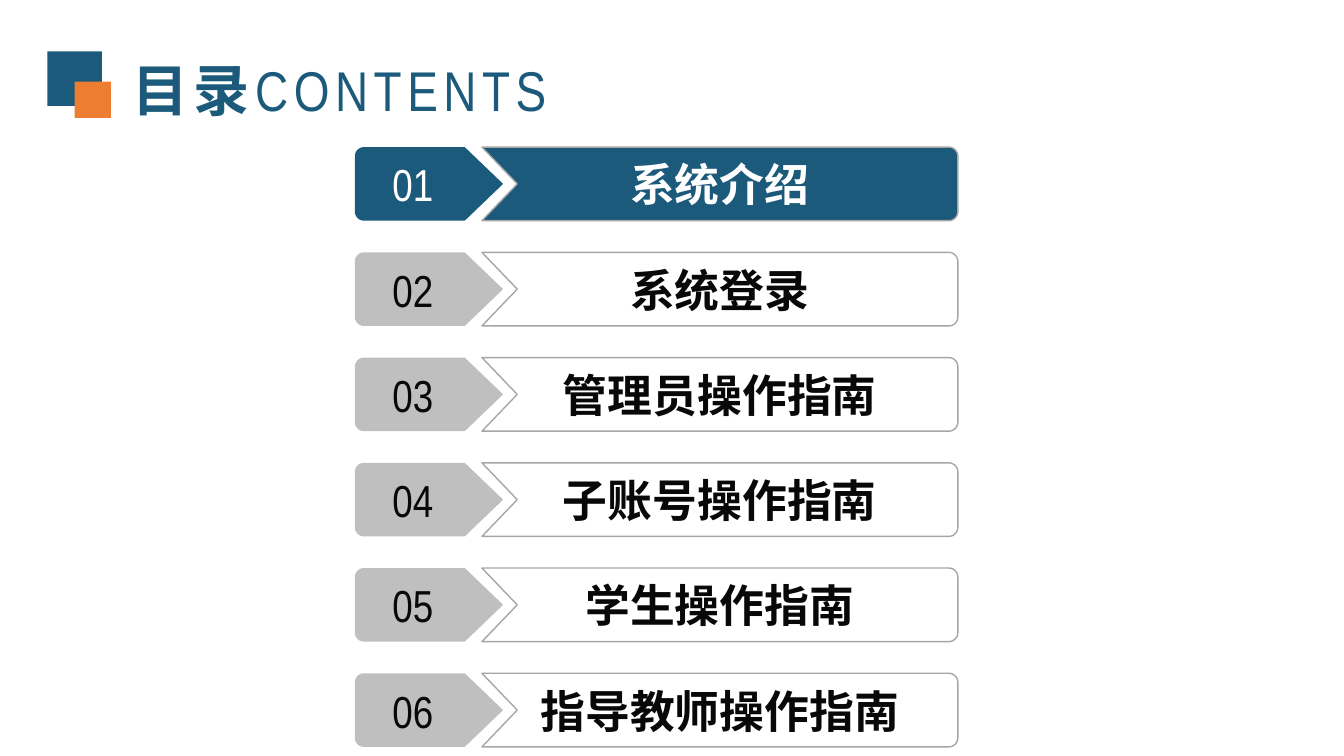
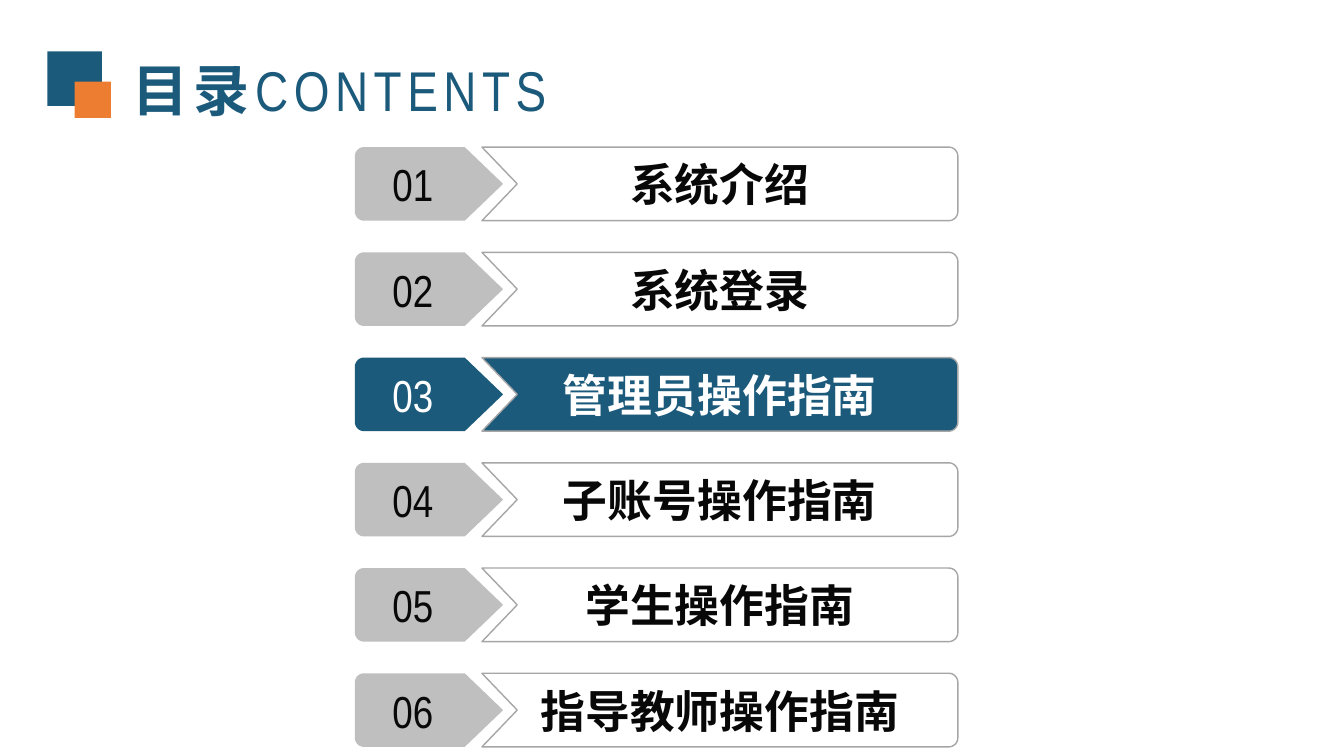
from math import cos, radians, sin

from pptx import Presentation
from pptx.dml.color import RGBColor
from pptx.enum import shapes, text
from pptx.oxml import ns
from pptx.util import Inches, Pt

BLUE = RGBColor(0x1C, 0x5A, 0x7C)
ORANGE = RGBColor(0xED, 0x7D, 0x31)
GREY = RGBColor(0xBF, 0xBF, 0xBF)
OUTLINE = RGBColor(0xA6, 0xA6, 0xA6)
INK = RGBColor(0x08, 0x08, 0x08)
WHITE = RGBColor(0xFF, 0xFF, 0xFF)

CJK_FONT = "Noto Sans CJK SC"
LATIN_FONT = "Arial Narrow"

CHAPTERS = ["系统介绍", "系统登录", "管理员操作指南",
            "子账号操作指南", "学生操作指南", "指导教师操作指南"]
ACTIVE_CHAPTERS = [1, 3]  # one contents slide for each

TOP, ROW_HEIGHT, ROW_PITCH = 1.46, 0.73, 5.22 / 5
TAG_LEFT, TAG_SHOULDER, TAG_TIP = 3.52, 4.61, 4.99
LABEL_LEFT, LABEL_NOTCH, LABEL_RIGHT = 4.78, 5.13, 9.5
RADIUS = 0.09


def add_run(p, words, name, **formats):
    r = p.add_run()
    r.text = words
    color = formats.pop("color")
    for key, value in dict(formats, name=name).items():
        setattr(r.font, key, value)
    r.font.color.rgb = color
    ea = r.font._element.makeelement(ns.qn("a:ea"), {"typeface": name})
    r.font._element.find(ns.qn("a:latin")).addnext(ea)
    return r


def paint(sp, fill, line=None):
    sp.shadow.inherit = False
    if fill is None:
        sp.fill.background()
    else:
        sp.fill.solid()
        sp.fill.fore_color.rgb = fill
    if line is None:
        sp.line.fill.background()
    else:
        sp.line.color.rgb = line
        sp.line.width = Pt(1)


def corner(x, y, start):
    """Points of a quarter circle around (x, y), clockwise from start degrees."""
    angles = [radians(start + step) for step in range(0, 91, 10)]
    return [(x + RADIUS * cos(a), y + RADIUS * sin(a)) for a in angles]


def add_outline(s, points, fill, line=None):
    emu = [(Inches(x), Inches(y)) for x, y in points]
    builder = s.shapes.build_freeform(*emu[0])
    builder.add_line_segments(emu[1:], close=True)
    sp = builder.convert_to_shape()
    paint(sp, fill, line)
    return sp


def set_caption(sp, words, name, color, bold, right_inset):
    tf = sp.text_frame
    formats = {"word_wrap": True, "vertical_anchor": text.MSO_ANCHOR.MIDDLE,
               "margin_left": Inches(0.15), "margin_right": Inches(right_inset),
               "margin_top": Inches(0.07), "margin_bottom": Inches(0.07)}
    for key, value in formats.items():
        setattr(tf, key, value)
    p = tf.paragraphs[0]
    p.alignment = text.PP_ALIGN.CENTER
    add_run(p, words, name, size=Pt(32), bold=bold, color=color)


def add_label(s, top, words, active):
    bottom, inner = top + ROW_HEIGHT, LABEL_RIGHT - RADIUS
    points = [(LABEL_LEFT, top), *corner(inner, top + RADIUS, -90),
              *corner(inner, bottom - RADIUS, 0), (LABEL_LEFT, bottom),
              (LABEL_NOTCH, top + ROW_HEIGHT / 2)]
    sp = add_outline(s, points, BLUE if active else None, OUTLINE)
    set_caption(sp, words, CJK_FONT, WHITE if active else INK, True, 0.15)


def add_tag(s, top, number, active):
    bottom, inner = top + ROW_HEIGHT, TAG_LEFT + RADIUS
    points = [(TAG_SHOULDER, top), (TAG_TIP, top + ROW_HEIGHT / 2),
              (TAG_SHOULDER, bottom), *corner(inner, bottom - RADIUS, 90),
              *corner(inner, top + RADIUS, 180)]
    sp = add_outline(s, points, BLUE if active else GREY)
    set_caption(sp, f"{number:02}", LATIN_FONT, WHITE if active else INK,
                False, 0.47)


def add_square(s, left, top, side, color):
    sp = s.shapes.add_shape(shapes.MSO_SHAPE.RECTANGLE, Inches(left),
                            Inches(top), Inches(side), Inches(side))
    paint(sp, color)


def add_title(s):
    add_square(s, 0.47, 0.51, 0.54, BLUE)
    add_square(s, 0.74, 0.81, 0.36, ORANGE)
    sp = s.shapes.title
    sp.left, sp.top = Inches(1.21), Inches(0.5)
    sp.width, sp.height = Inches(5.17), Inches(0.81)
    tf = sp.text_frame
    tf.vertical_anchor = text.MSO_ANCHOR.TOP
    tf.auto_size = text.MSO_AUTO_SIZE.SHAPE_TO_FIT_TEXT
    p = tf.paragraphs[0]
    p.alignment = text.PP_ALIGN.LEFT
    for words, name, bold in [("目录", CJK_FONT, True),
                              ("CONTENTS", LATIN_FONT, False)]:
        r = add_run(p, words, name, size=Pt(40), bold=bold, color=BLUE)
        r.font._element.set("spc", "400")


def add_contents_slide(prs, active_number):
    s = prs.slides.add_slide(prs.slide_layouts[5])
    add_title(s)
    for number, words in enumerate(CHAPTERS, 1):
        top = TOP + (number - 1) * ROW_PITCH
        active = number == active_number
        add_label(s, top, words, active)
        add_tag(s, top, number, active)


def main():
    prs = Presentation()
    prs.slide_width, prs.slide_height = Inches(13.33), Inches(7.5)
    for number in ACTIVE_CHAPTERS:
        add_contents_slide(prs, number)
    prs.save("out.pptx")


if __name__ == "__main__":
    main()
